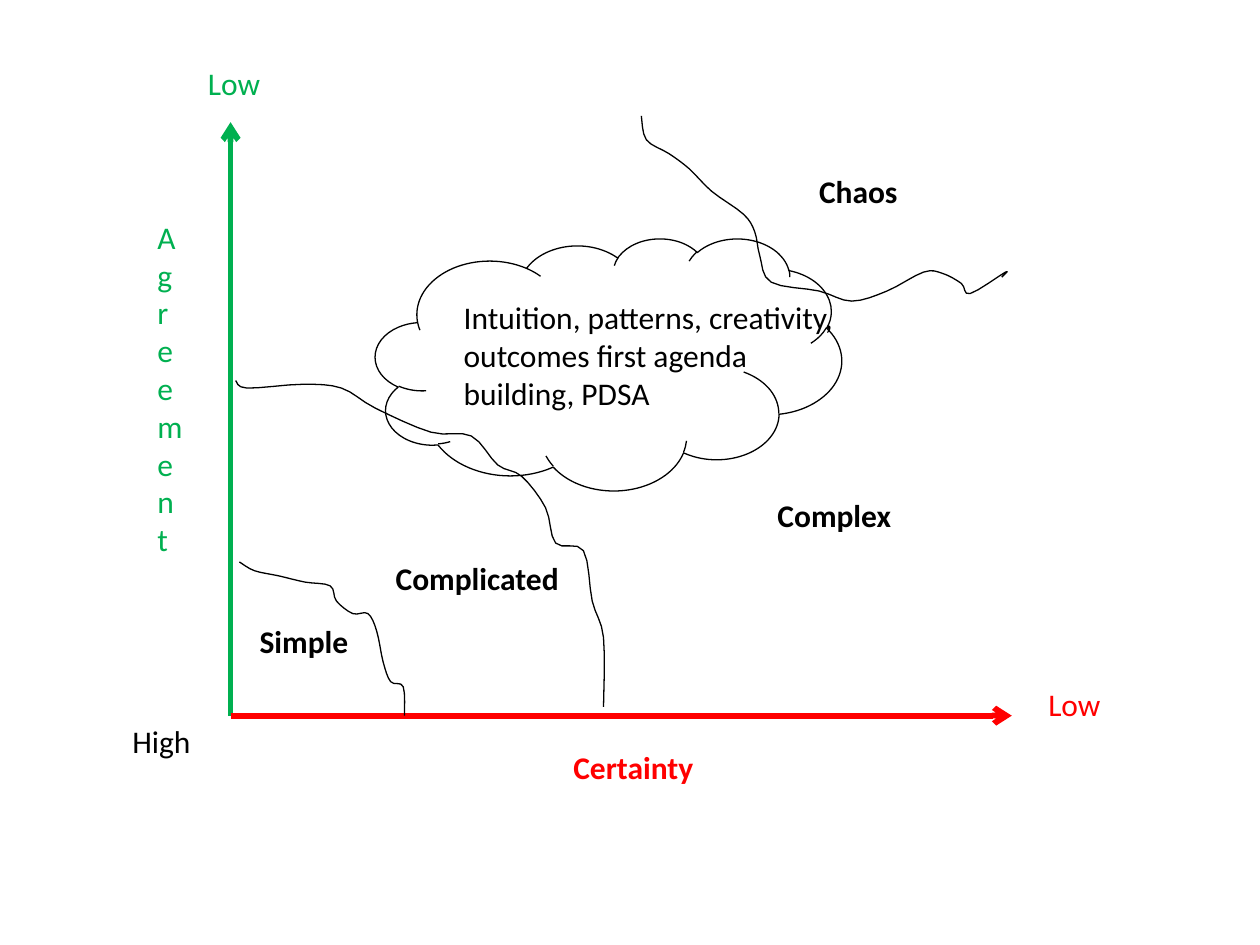
from lxml import etree
from pptx import Presentation
from pptx.dml.color import RGBColor
from pptx.enum.shapes import MSO_CONNECTOR, MSO_SHAPE
from pptx.enum.text import MSO_AUTO_SIZE
from pptx.oxml.ns import qn
from pptx.util import Inches, Pt

STRAIGHT = MSO_CONNECTOR.STRAIGHT
CLOUD = MSO_SHAPE.CLOUD
FIT = MSO_AUTO_SIZE.SHAPE_TO_FIT_TEXT

BLACK, GREEN, RED = "000000", "00B050", "FF0000"
FONT, SIZE = "Calibri", 18
THIN, THICK = 0.75, 3.25
LINE_HEIGHT = 0.3
SIDE_PAD, TOP_PAD = 0.09, 0.05
STEPS = 4  # line pieces between two turns of a border

ORIGIN_X, ORIGIN_Y = 1.83, 5.68
AXIS_TOP, AXIS_RIGHT = 0.97, 8.03

# Each border is given by its main turns; smooth() fills in the rest.
BORDERS = {
    "simple to complicated": [
        (1.9, 4.46), (2.02, 4.53), (2.21, 4.57), (2.42, 4.62), (2.62, 4.65),
        (2.67, 4.77), (2.8, 4.87), (2.92, 4.87), (2.99, 5.01), (3.04, 5.25),
        (3.1, 5.41), (3.2, 5.45), (3.21, ORIGIN_Y)],
    "complicated to complex": [
        (1.87, 3.02), (1.96, 3.08), (2.4, 3.05), (2.71, 3.08), (2.98, 3.24),
        (3.42, 3.43), (3.74, 3.46), (3.95, 3.69), (4.14, 3.78), (4.33, 4.03),
        (4.41, 4.31), (4.63, 4.37), (4.7, 4.77), (4.79, 5.06), (4.79, 5.61)],
    "complex to chaos": [
        (5.09, 0.92), (5.13, 1.11), (5.31, 1.22), (5.47, 1.34), (5.65, 1.52),
        (5.9, 1.7), (5.99, 1.84), (6.03, 2.03), (6.12, 2.24), (6.5, 2.31),
        (6.76, 2.39), (7.04, 2.31), (7.33, 2.16), (7.48, 2.17), (7.63, 2.25),
        (7.7, 2.33), (7.98, 2.16), (7.95, 2.2)],
}

# Zone name: left, top, width
ZONES = {
    "Simple": (1.97, 4.89, 1.21),
    "Complicated": (3.05, 4.39, 1.95),
    "Complex": (6.08, 3.89, 1.95),
    "Chaos": (6.41, 1.32, 1.08),
}
METHODS = ("Intuition, patterns, creativity, outcomes first agenda "
           "building, PDSA")


def paint(line, color, width):
    line.color.rgb = RGBColor.from_string(color)
    line.width = Pt(width)


def outline(shape):
    """Leave only a thin black line on the shape."""
    shape.shadow.inherit = False
    shape.fill.background()
    paint(shape.line, BLACK, THIN)


def blend(a, b, c, d, t):
    """Catmull-Rom value between b and c, at share t of the way."""
    return (2 * b + (c - a) * t + (2 * a - 5 * b + 4 * c - d) * t ** 2
            + (3 * b - a - 3 * c + d) * t ** 3) / 2


def smooth(turns):
    """Points of a curve that runs through all turns."""
    ends = [turns[0], *turns, turns[-1]]
    points = [turns[0]]
    for near in zip(ends, ends[1:], ends[2:], ends[3:]):
        xs, ys = zip(*near)
        for step in range(1, STEPS + 1):
            t = step / STEPS
            points.append((blend(*xs, t), blend(*ys, t)))
    return points


def add_border(slide, turns):
    start, *rest = [(Inches(x), Inches(y)) for x, y in smooth(turns)]
    pen = slide.shapes.build_freeform(*start)
    pen.add_line_segments(rest, close=False)
    outline(pen.convert_to_shape())


def add_axis(slide, x, y, color):
    """Draw an arrow from the origin to x, y."""
    axis = slide.shapes.add_connector(
        STRAIGHT, *map(Inches, (ORIGIN_X, ORIGIN_Y, x, y)))
    paint(axis.line, color, THICK)
    props = axis._element.spPr
    tail = etree.SubElement(props.find(qn("a:ln")), qn("a:tailEnd"))
    tail.set("type", "arrow")
    etree.SubElement(props, qn("a:effectLst"))


def add_label(slide, text, left, top, width,
              color=BLACK, bold=False, lines=1):
    height = lines * LINE_HEIGHT + 2 * TOP_PAD
    box = slide.shapes.add_textbox(*map(Inches, (left, top, width, height)))
    frame = box.text_frame
    frame.word_wrap = True
    frame.auto_size = FIT
    frame.margin_left = frame.margin_right = Inches(SIDE_PAD)
    frame.margin_top = frame.margin_bottom = Inches(TOP_PAD)
    run = frame.paragraphs[0].add_run()
    run.text = text
    font = run.font
    font.name, font.size, font.bold = FONT, Pt(SIZE), bold
    font.color.rgb = RGBColor.from_string(color)


def add_axes(slide):
    add_axis(slide, ORIGIN_X, AXIS_TOP, GREEN)
    add_axis(slide, AXIS_RIGHT, ORIGIN_Y, RED)
    add_label(slide, "Certainty", 4.46, 5.89, 2.22, RED, bold=True)
    # The box is one letter wide, so the word runs downwards.
    name = "Agreement"
    add_label(slide, name, 1.16, 1.68, 0.34, GREEN, lines=len(name))
    add_label(slide, "Low", 1.56, 0.46, 0.81, GREEN)
    add_label(slide, "Low", 8.23, 5.39, 0.74, RED)
    add_label(slide, "High", 0.96, ORIGIN_Y, 0.88)


def add_cloud(slide):
    box = map(Inches, (2.98, 1.89, 3.7, 2))
    outline(slide.shapes.add_shape(CLOUD, *box))
    add_label(slide, METHODS, 3.59, 2.32, 3.23, lines=3)


def main():
    deck = Presentation()
    deck.slide_width, deck.slide_height = Inches(10), Inches(7.5)
    slide = deck.slides.add_slide(deck.slide_layouts[6])
    add_axes(slide)
    for turns in BORDERS.values():
        add_border(slide, turns)
    for name, place in ZONES.items():
        add_label(slide, name, *place, bold=True)
    add_cloud(slide)
    deck.save("out.pptx")


if __name__ == "__main__":
    main()
